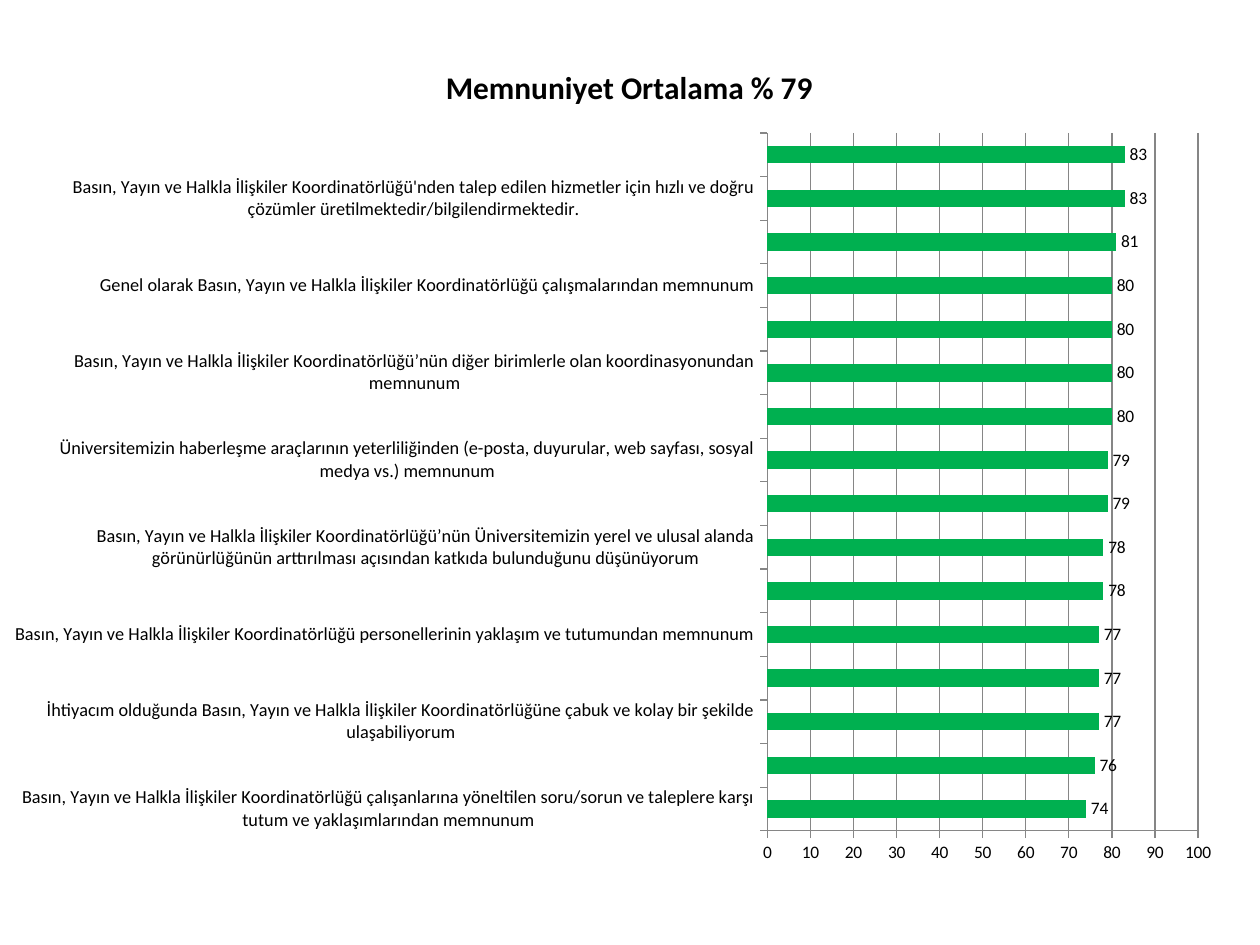
from lxml import etree
from pptx import Presentation
from pptx import util as u
from pptx.chart.data import CategoryChartData
from pptx.dml.color import RGBColor
from pptx.enum import chart as ch
from pptx.oxml import ns

PX = 914400 // 126
FONT = "Calibri"
COLORS = {"bar": "00B050", "text": "000000", "line": "868686"}
TITLE = "Memnuniyet Ortalama % 79"
UNIT = "Basın, Yayın ve Halkla İlişkiler Koordinatörlüğü"
SCORES = [74, 76, 77, 77, 77, 78, 78, 79, 79, 80, 80, 80, 80, 81, 83, 83]
LABEL_STEP = 2
QUESTIONS = [
    f"{UNIT} çalışanlarına yöneltilen soru/sorun ve taleplere karşı tutum ve yaklaşımlarından memnunum",
    f"İhtiyacım olduğunda {UNIT}ne çabuk ve kolay bir şekilde ulaşabiliyorum",
    f"{UNIT} personellerinin yaklaşım ve tutumundan memnunum",
    f"{UNIT}’nün Üniversitemizin yerel ve ulusal alanda görünürlüğünün arttırılması "
    "açısından katkıda bulunduğunu düşünüyorum",
    "Üniversitemizin haberleşme araçlarının yeterliliğinden "
    "(e-posta, duyurular, web sayfası, sosyal medya vs.) memnunum",
    f"{UNIT}’nün diğer birimlerle olan koordinasyonundan memnunum",
    f"Genel olarak {UNIT} çalışmalarından memnunum",
    f"{UNIT}'nden talep edilen hizmetler için hızlı ve doğru "
    "çözümler üretilmektedir/bilgilendirmektedir.",
]
FRAME = (15, 37, 1221, 843)
PLOT = (765, 133, 433, 698)
TITLE_AT = (436, 60)


def style_font(font, size, bold=False):
    font.name = FONT
    font.size = u.Pt(size)
    font.bold = bold
    font.color.rgb = RGBColor.from_string(COLORS["text"])


def style_line(line):
    line.color.rgb = RGBColor.from_string(COLORS["line"])
    line.width = u.Pt(0.75)


def place(parent, position, inner=False):
    left, top, width, height = FRAME
    shares = [(position[0] - left) / width, (position[1] - top) / height]
    shares += [size / full for size, full in zip(position[2:], (width, height))]
    layout = parent.find(ns.qn("c:layout"))
    if layout is None:
        layout = etree.Element(ns.qn("c:layout"))
        parent.insert(1 if parent.find(ns.qn("c:tx")) is not None else 0, layout)
    manual = etree.SubElement(layout, ns.qn("c:manualLayout"))
    fields = [("layoutTarget", "inner")] if inner else []
    fields += [("xMode", "edge"), ("yMode", "edge")]
    fields += [(name, f"{share:.4f}") for name, share in zip("xywh", shares)]
    for name, value in fields:
        etree.SubElement(manual, ns.qn(f"c:{name}")).set("val", value)


deck = Presentation()
deck.slide_width, deck.slide_height = 1260 * PX, 945 * PX
page = deck.slides.add_slide(deck.slide_layouts[6])

names = [""] * len(SCORES)
names[::LABEL_STEP] = QUESTIONS
scores = CategoryChartData(number_format="0")
scores.categories = names
scores.add_series(TITLE, SCORES)
chart = page.shapes.add_chart(
    ch.XL_CHART_TYPE.BAR_CLUSTERED, *(side * PX for side in FRAME), scores).chart
style_font(chart.font, 10)
chart.has_legend = False
chart.has_title = True
span = chart.chart_title.text_frame.paragraphs[0].add_run()
span.text = TITLE
style_font(span.font, 18, True)
chart.chart_title.include_in_layout = False

bars = chart.plots[0]
bars.gap_width = 150
bars.vary_by_categories = False
fill = bars.series[0].format.fill
fill.solid()
fill.fore_color.rgb = RGBColor.from_string(COLORS["bar"])
bars.has_data_labels = True
labels = bars.data_labels
labels.show_value = True
labels.number_format = "0"
labels.number_format_is_linked = False
labels.position = ch.XL_LABEL_POSITION.OUTSIDE_END
style_font(labels.font, 10)

for axis, size in ((chart.category_axis, 10.5), (chart.value_axis, 10)):
    axis.major_tick_mark = ch.XL_TICK_MARK.OUTSIDE
    axis.minor_tick_mark = ch.XL_TICK_MARK.NONE
    style_font(axis.tick_labels.font, size)
    style_line(axis.format.line)
scale = chart.value_axis
scale.minimum_scale, scale.maximum_scale, scale.major_unit = 0, 100, 10
scale.has_major_gridlines = True
style_line(scale.major_gridlines.format.line)
scale.tick_labels.number_format = "0"
scale.tick_labels.number_format_is_linked = False

root = chart.element.find(ns.qn("c:chart"))
place(root.find(ns.qn("c:title")), TITLE_AT)
place(root.find(ns.qn("c:plotArea")), PLOT, inner=True)

deck.save("out.pptx")
